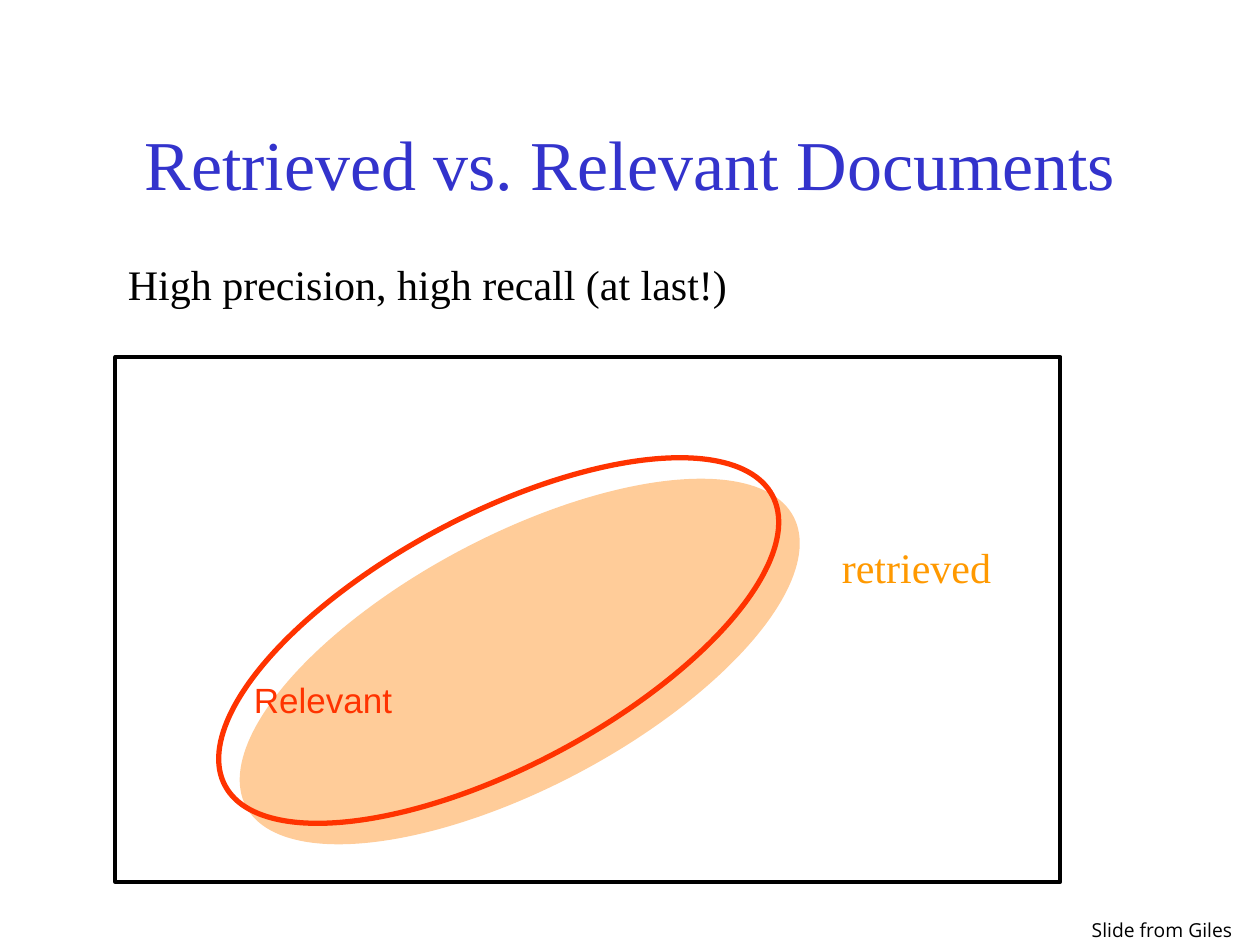
from pptx import Presentation
from pptx import util as u
from pptx.dml.color import RGBColor
from pptx.enum import shapes, text

THEME = {
    "title": "3333CC", "ink": "000000", "relevant": "FF3300",
    "retrieved": "FF9900", "retrieved_fill": "FFCC99",
    "serif": "Times New Roman", "sans": "Arial", "credit_font": "Open Sans",
    "title_size": 40, "body_size": 24, "label_size": 20, "credit_size": 11,
}

deck = Presentation()
deck.slide_width, deck.slide_height = u.Inches(10), u.Inches(7.5)
page = deck.slides.add_slide(deck.slide_layouts[6])

# Grid of 120 columns by 90 rows; every cell is square
CELL = deck.slide_width / 120


def grid(*cells):
    return [round(cell * CELL) for cell in cells]


def add_text(words, at, size, color, font=THEME["serif"], wrap=False,
             align=text.PP_ALIGN.LEFT, anchor=text.MSO_ANCHOR.TOP):
    box = page.shapes.add_textbox(*grid(*at))
    frame = box.text_frame
    frame.word_wrap = wrap
    frame.vertical_anchor = anchor
    para = frame.paragraphs[0]
    para.alignment = align
    span = para.add_run()
    span.text = words
    span.font.name, span.font.size = font, u.Pt(size)
    span.font.color.rgb = RGBColor.from_string(color)


# Title and statement
add_text("Retrieved vs. Relevant Documents", (9, 8, 102, 15),
         THEME["title_size"], THEME["title"], wrap=True,
         align=text.PP_ALIGN.CENTER, anchor=text.MSO_ANCHOR.MIDDLE)
add_text("High precision, high recall (at last!)", (11, 24, 59.5, 6),
         THEME["body_size"], THEME["ink"])

# Retrieved set, relevant set, frame: kind, place, tilt, fill, line, line width
OVAL, RECTANGLE = shapes.MSO_SHAPE.OVAL, shapes.MSO_SHAPE.RECTANGLE
TILT = 332.1
for kind, at, tilt, fill, line, width in (
    (OVAL, (20, 51, 59, 24), TILT, THEME["retrieved_fill"], None, 0),
    (OVAL, (18, 49, 59, 24), TILT, None, THEME["relevant"], 3),
    (RECTANGLE, (11, 34, 90, 50), 0, None, THEME["ink"], 2.25),
):
    shape = page.shapes.add_shape(kind, *grid(*at))
    shape.shadow.inherit = False
    shape.rotation = tilt
    if fill:
        shape.fill.solid()
        shape.fill.fore_color.rgb = RGBColor.from_string(fill)
    else:
        shape.fill.background()
    if line:
        shape.line.color.rgb = RGBColor.from_string(line)
        shape.line.width = u.Pt(width)
    else:
        shape.line.fill.background()

# Set labels and credit
add_text("Relevant", (23, 64, 15.6, 5.2), THEME["label_size"],
         THEME["relevant"], font=THEME["sans"])
add_text("retrieved", (79, 51, 16.7, 6), THEME["body_size"],
         THEME["retrieved"])
add_text("Slide from Giles", (102.8, 86.9, 17, 3.5), THEME["credit_size"],
         THEME["ink"], font=THEME["credit_font"])

deck.save("out.pptx")
